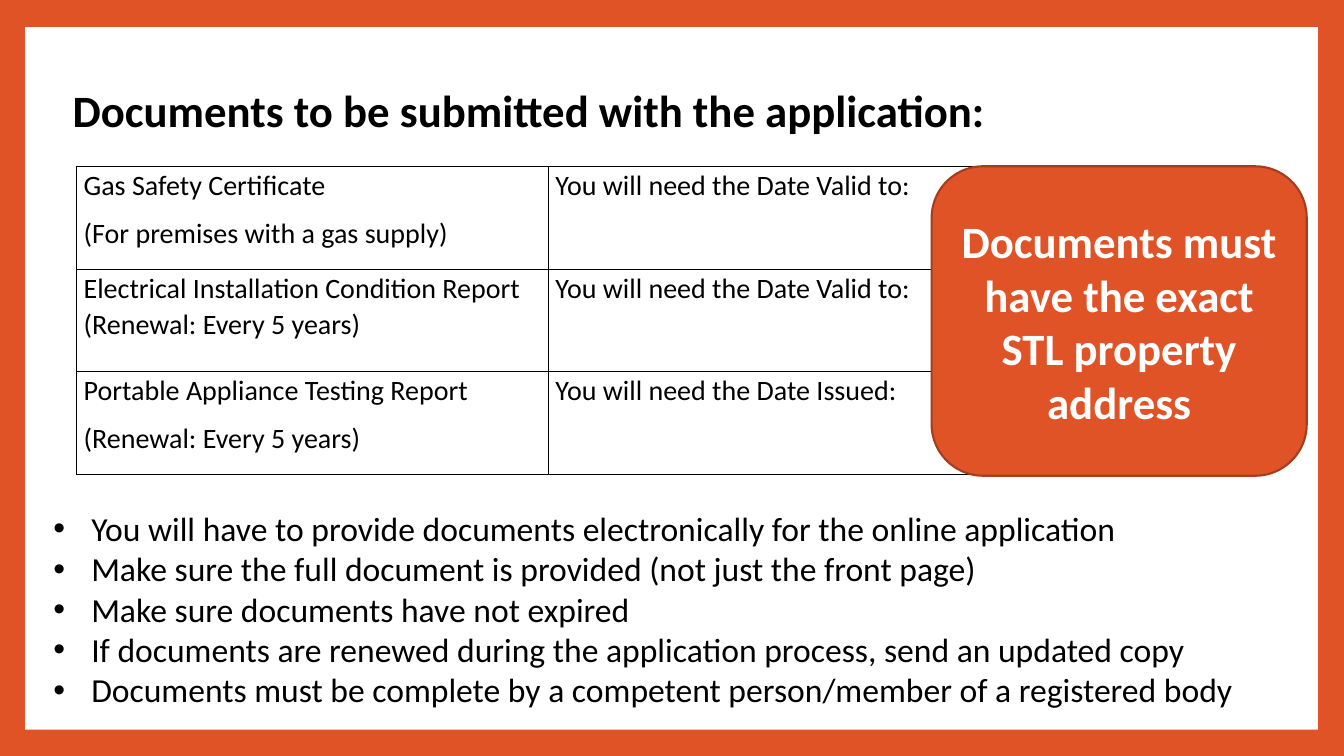
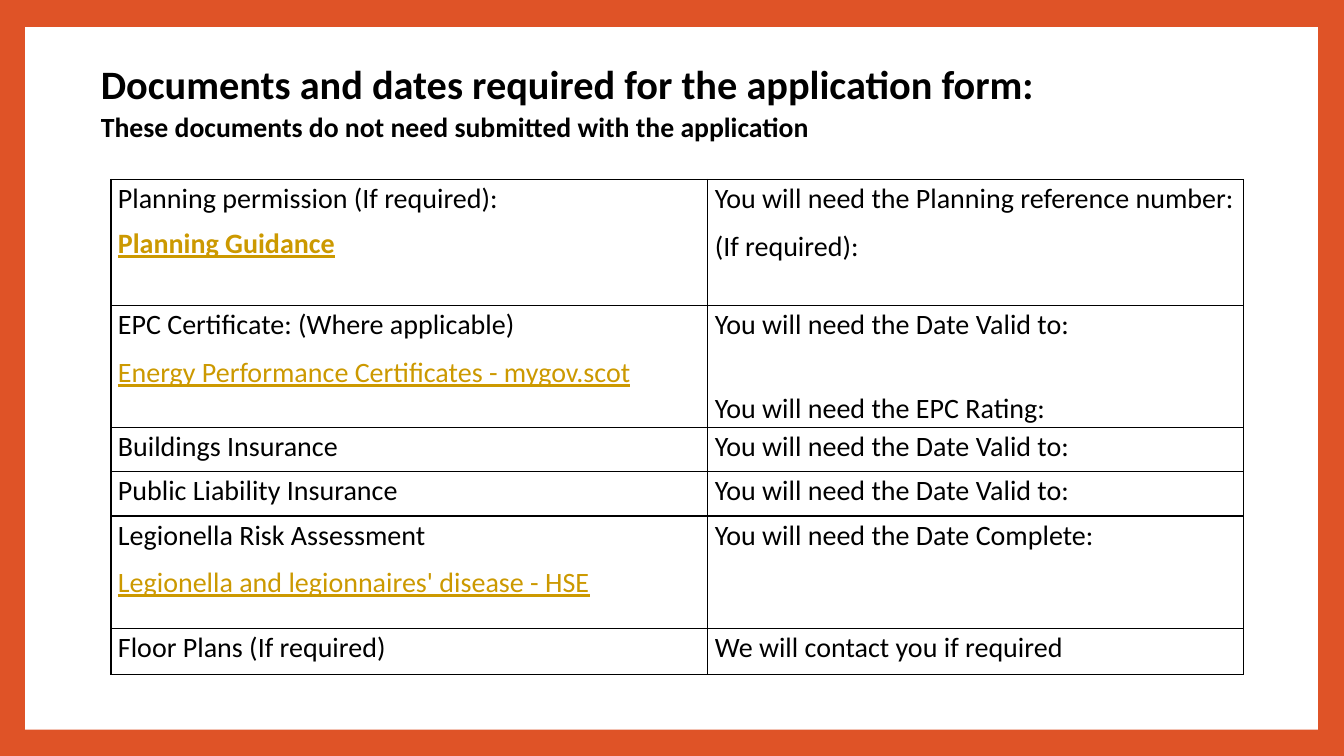
"""Build two slides on the documents needed for a licence application."""
import pptx
import pptx.util
import pptx.dml.color
import pptx.enum.shapes
import pptx.enum.text
import pptx.oxml
import pptx.oxml.ns

Inches = pptx.util.Inches
Pt = pptx.util.Pt
RGBColor = pptx.dml.color.RGBColor

FONT = "Calibri"
ORANGE = RGBColor(0xDF, 0x53, 0x27)
RUST = RGBColor(0xA5, 0x3D, 0x1D)
GOLD = RGBColor(0xCC, 0x99, 0x00)
BLACK = RGBColor(0, 0, 0)
WHITE = RGBColor(0xFF, 0xFF, 0xFF)

PLAIN = {}
LINK = {"color": GOLD, "under": True}
STRONG = {"color": GOLD, "under": True, "bold": True, "lead": 1.0}
APART = {"before": 26}

VALID = [("You will need the Date Valid to:", PLAIN)]
RENEW = ("(Renewal: Every 5 years)", PLAIN)

SUBMIT = {
    "title": [("Documents to be submitted with the application:", 32)],
    "head": (0.62, 0.58, 10.8, 0.97),
    "spot": (0.76, 1.65),
    "cols": [4.68, 4.25],
    "rows": [
        (1.02, [("Gas Safety Certificate", PLAIN),
                ("(For premises with a gas supply)", PLAIN)], VALID),
        (1.02, [("Electrical Installation Condition Report\n" + RENEW[0], PLAIN)], VALID),
        (1.02, [("Portable Appliance Testing Report", PLAIN), RENEW],
         [("You will need the Date Issued:", PLAIN)]),
    ],
}
DATES = {
    "title": [("Documents and dates required for the application form:\n", 28.8),
              ("These documents do not need submitted with the application", 19.8)],
    "head": (0.9, 0.51, 10.99, 0.96),
    "spot": (1.1, 1.78),
    "cols": [5.92, 5.31],
    "rows": [
        (1.25, [("Planning permission (If required):", PLAIN), ("Planning Guidance", STRONG)],
         [("You will need the Planning reference number:", PLAIN), ("(If required):", PLAIN)]),
        (1.21, [("EPC Certificate: (Where applicable)", PLAIN),
                ("Energy Performance Certificates - mygov.scot", LINK)],
         VALID + [("You will need the EPC Rating:", APART)]),
        (0.44, [("Buildings Insurance", PLAIN)], VALID),
        (0.44, [("Public Liability Insurance", PLAIN)], VALID),
        (1.12, [("Legionella Risk Assessment", PLAIN),
                ("Legionella and legionnaires' disease - HSE", LINK)],
         [("You will need the Date Complete:", PLAIN)]),
        (0.45, [("Floor Plans (If required)", PLAIN)],
         [("We will contact you if required", PLAIN)]),
    ],
}
POINTS = [
    "You will have to provide documents electronically for the online application",
    "Make sure the full document is provided (not just the front page)",
    "Make sure documents have not expired",
    "If documents are renewed during the application process, send an updated copy",
    "Documents must be complete by a competent person/member of a registered body",
]
CALL = "Documents must have the exact STL property address"


def place(shape, box):
    shape.left, shape.top, shape.width, shape.height = map(Inches, box)


def write(para, text, size, color=BLACK, bold=False, under=False):
    for num, line in enumerate(text.split("\n")):
        if num:
            para.add_line_break()
        if line:
            run = para.add_run()
            run.text = line
            font = run.font
            font.name, font.size, font.bold = FONT, Pt(size), bold
            font.underline = under
            font.color.rgb = color


def paras(frame, count):
    return [frame.paragraphs[0]] + [frame.add_paragraph() for _ in range(count - 1)]


def box(slide, kind, spot, fill, edge=None):
    shape = slide.shapes.add_shape(kind, *map(Inches, spot))
    shape.shadow.inherit = False
    shape.fill.solid()
    shape.fill.fore_color.rgb = fill
    if edge is None:
        shape.line.fill.background()
    else:
        shape.line.color.rgb = edge
        shape.line.width = Pt(1.5)
    return shape


def dress(master, slide):
    back = master.background.fill
    back.solid()
    back.fore_color.rgb = ORANGE
    panel = box(slide, pptx.enum.shapes.MSO_SHAPE.RECTANGLE, (0.25, 0.27, 12.82, 6.97), WHITE)
    panel.element.nvSpPr.cNvPr.id = 20
    master.shapes.element.insert(2, panel.element)


def head(slide, data):
    title = slide.shapes.title
    place(title, data["head"])
    frame = title.text_frame
    frame.auto_size = pptx.enum.text.MSO_AUTO_SIZE.NONE
    frame.vertical_anchor = pptx.enum.text.MSO_ANCHOR.MIDDLE
    para = frame.paragraphs[0]
    para.alignment = pptx.enum.text.PP_ALIGN.LEFT
    para.line_spacing, para.space_after = 1.07, Pt(8)
    for text, size in data["title"]:
        write(para, text, size, bold=True)


def rule(cell):
    props = cell._tc.get_or_add_tcPr()
    for side in "LRTB":
        props.append(pptx.oxml.parse_xml(
            f'<a:ln{side} {pptx.oxml.ns.nsdecls("a")} w="12700"><a:solidFill>'
            f'<a:srgbClr val="{BLACK}"/></a:solidFill></a:ln{side}>'))


def fill(cell, lines):
    cell.margin_left = cell.margin_right = Inches(0.07)
    cell.margin_top = cell.margin_bottom = 0
    rule(cell)
    cell.fill.background()
    items = paras(cell.text_frame, len(lines))
    for para, (text, style) in zip(items, lines):
        look = dict(style)
        para.line_spacing = look.pop("lead", 1.07)
        para.space_before = Pt(look.pop("before", 0))
        para.space_after = Pt(0 if para is items[-1] else 8)
        write(para, text, 20, **look)


def grid(slide, data):
    rows, cols = data["rows"], data["cols"]
    size = sum(cols), sum(row[0] for row in rows)
    table = slide.shapes.add_table(
        len(rows), len(cols), *map(Inches, data["spot"] + size)).table
    table.first_row = table.horz_banding = False
    for col, width in zip(table.columns, cols):
        col.width = Inches(width)
    for num, (height, *cells) in enumerate(rows):
        table.rows[num].height = Inches(height)
        for col, lines in enumerate(cells):
            fill(table.cell(num, col), lines)


def bullets(slide):
    body = slide.placeholders[1]
    place(body, (0.43, 4.99, 12.78, 2.12))
    frame = body.text_frame
    frame.auto_size = pptx.enum.text.MSO_AUTO_SIZE.NONE
    for para, text in zip(paras(frame, len(POINTS)), POINTS):
        para.space_before = Pt(0)
        write(para, text, 24)


def callout(slide):
    shape = box(slide, pptx.enum.shapes.MSO_SHAPE.ROUNDED_RECTANGLE,
                (9.24, 1.65, 3.72, 3.07), ORANGE, RUST)
    frame = shape.text_frame
    frame.word_wrap = True
    frame.vertical_anchor = pptx.enum.text.MSO_ANCHOR.MIDDLE
    para = frame.paragraphs[0]
    para.alignment = pptx.enum.text.PP_ALIGN.CENTER
    write(para, CALL, 32, WHITE, bold=True)


def main():
    deck = pptx.Presentation()
    deck.slide_width, deck.slide_height = Inches(13.33), Inches(7.5)
    first = deck.slides.add_slide(deck.slide_layouts[1])
    second = deck.slides.add_slide(deck.slide_layouts[5])
    dress(deck.slide_master, first)
    for slide, data in ((first, SUBMIT), (second, DATES)):
        head(slide, data)
        grid(slide, data)
    bullets(first)
    callout(first)
    deck.save("out.pptx")


if __name__ == "__main__":
    main()
